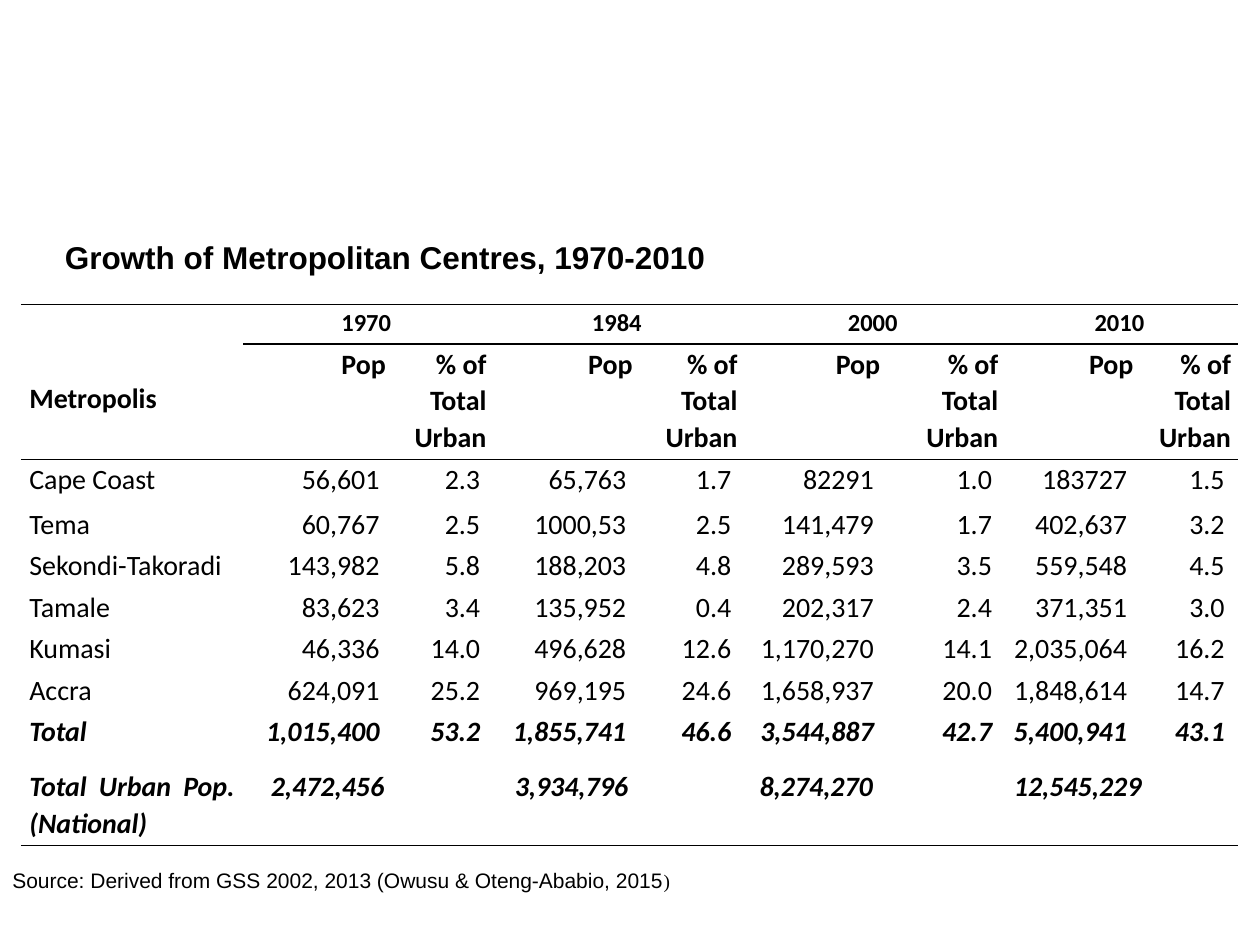
"""Build a slide with a table of metropolitan population growth, 1970-2010."""
from lxml import etree
from pptx import Presentation
from pptx.dml.color import RGBColor
from pptx.enum.text import MSO_ANCHOR as Anchor, MSO_AUTO_SIZE as AutoSize, PP_ALIGN as Align
from pptx.oxml.ns import qn
from pptx.util import Pt

BLACK = RGBColor(0, 0, 0)
NO_STYLE = "{2D5ABB26-0587-4C30-8999-92F81FD0307C}"
YEARS = ["1970", "1984", "2000", "2010"]
CITIES = [
    ["Cape Coast", "56,601", "2.3", "65,763", "1.7", "82291", "1.0", "183727", "1.5"],
    ["Tema", "60,767", "2.5", "1000,53", "2.5", "141,479", "1.7", "402,637", "3.2"],
    ["Sekondi-Takoradi", "143,982", "5.8", "188,203", "4.8", "289,593", "3.5", "559,548", "4.5"],
    ["Tamale", "83,623", "3.4", "135,952", "0.4", "202,317", "2.4", "371,351", "3.0"],
    ["Kumasi", "46,336", "14.0", "496,628", "12.6", "1,170,270", "14.1", "2,035,064", "16.2"],
    ["Accra", "624,091", "25.2", "969,195", "24.6", "1,658,937", "20.0", "1,848,614", "14.7"],
    ["Total", "1,015,400", "53.2", "1,855,741", "46.6", "3,544,887", "42.7", "5,400,941", "43.1"],
]
URBAN_TOTALS = ["2,472,456", "3,934,796", "8,274,270", "12,545,229"]
COLUMN_WIDTHS = [127, 85.5, 57.5, 83.5, 60, 81.5, 67.5, 77.25, 55.75]
ROW_HEIGHTS = [22.5, 66, 25.5] + [23.75] * 5 + [31.5, 45]
LAST_ROW = len(ROW_HEIGHTS) - 1


def set_borders(cell, visible_sides):
    properties = cell._tc.get_or_add_tcPr()
    for side in ("lnL", "lnR", "lnT", "lnB"):
        line = etree.SubElement(properties, qn(f"a:{side}"), w=str(Pt(1)))
        if side in visible_sides:
            fill = etree.SubElement(line, qn("a:solidFill"))
            etree.SubElement(fill, qn("a:srgbClr"), val=str(BLACK))
        else:
            etree.SubElement(line, qn("a:noFill"))


def add_text(slide, left, top, width, height, anchor, runs):
    box = slide.shapes.add_textbox(Pt(left), Pt(top), Pt(width), Pt(height))
    frame = box.text_frame
    frame.word_wrap = False
    frame.auto_size = AutoSize.SHAPE_TO_FIT_TEXT
    frame.vertical_anchor = anchor
    for text, font_name, size, bold in runs:
        run = frame.paragraphs[0].add_run()
        run.text = text
        run.font.name = font_name
        run.font.size = Pt(size)
        run.font.bold = bold
        run.font.color.rgb = BLACK


presentation = Presentation()
presentation.slide_width = Pt(720)
presentation.slide_height = Pt(540)
slide = presentation.slides.add_slide(presentation.slide_layouts[6])

year_row, urban_row = ["Metropolis"], ["Total Urban Pop. (National)"]
for year, urban_total in zip(YEARS, URBAN_TOTALS):
    year_row += [year, ""]
    urban_row += [urban_total, ""]
heading_row = [""] + ["Pop", "% of Total Urban"] * len(YEARS)
rows = [year_row, heading_row, *CITIES, urban_row]
row_borders = {0: ("lnT", "lnB"), 1: ("lnT", "lnB"), 2: ("lnT",), LAST_ROW: ("lnB",)}

table_shape = slide.shapes.add_table(
    len(rows), len(COLUMN_WIDTHS), Pt(12), Pt(174), Pt(sum(COLUMN_WIDTHS)), Pt(sum(ROW_HEIGHTS)))
table = table_shape.table
table.first_row = table.horz_banding = False
table._tbl.tblPr.find(qn("a:tableStyleId")).text = NO_STYLE
for column, width in zip(table.columns, COLUMN_WIDTHS):
    column.width = Pt(width)
for row, height in zip(table.rows, ROW_HEIGHTS):
    row.height = Pt(height)

for r, values in enumerate(rows):
    for c, value in enumerate(values):
        cell = table.cell(r, c)
        cell.margin_left = cell.margin_right = Pt(4.8)
        cell.margin_top, cell.margin_bottom = Pt(0.7), Pt(0)
        paragraph = cell.text_frame.paragraphs[0]
        paragraph.text = value
        paragraph.line_spacing = 1.07
        paragraph.font.name = "Calibri"
        paragraph.font.size = Pt(14 if r == 0 and c else 16)
        paragraph.font.bold = r < 2 or r >= LAST_ROW - 1
        paragraph.font.italic = r >= LAST_ROW - 1
        paragraph.font.color.rgb = BLACK
        if r == LAST_ROW:
            paragraph.alignment = Align.JUSTIFY
            if c:
                cell.margin_left = Pt(5 + 1.8 * (7 - c))
        elif r == 0 and c:
            paragraph.alignment = Align.CENTER
            cell.margin_right = Pt(7.2)
        elif c:
            paragraph.alignment = Align.RIGHT
            cell.margin_left = Pt(2)
            cell.margin_right = Pt(4 if r == 1 else 7.6)
        set_borders(cell, row_borders.get(r, ()))
        cell.fill.background()

table.cell(0, 0).margin_top = Pt(42.8)
table.cell(0, 0).merge(table.cell(1, 0))
for c in range(1, len(COLUMN_WIDTHS), 2):
    for r in (0, LAST_ROW):
        table.cell(r, c).merge(table.cell(r, c + 1))

add_text(slide, 30, 132, 384.5, 29, Anchor.MIDDLE,
         [("Growth of Metropolitan Centres, 1970-2010", "Arial", 18, True)])
add_text(slide, 0, 492, 393, 21.5, Anchor.TOP,
         [("Source: Derived from GSS 2002, 2013 (Owusu & Oteng-Ababio, 2015", "Arial", 12, False),
          (")", "Times New Roman", 11, False)])

presentation.save("out.pptx")
